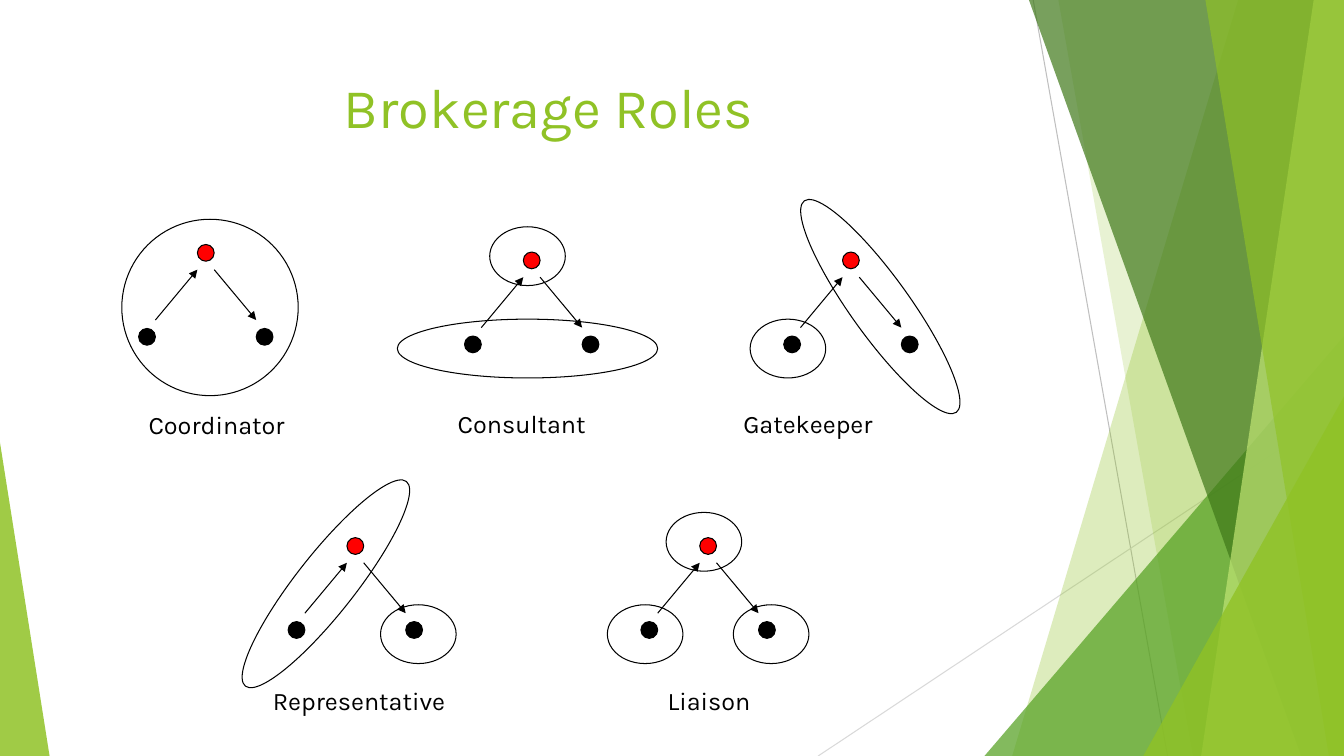
from dataclasses import dataclass

from lxml.etree import SubElement
from pptx import Presentation
from pptx.dml.color import RGBColor
from pptx.enum.shapes import MSO_CONNECTOR as Conn, MSO_SHAPE as Shape
from pptx.enum.text import MSO_ANCHOR as Anchor, PP_ALIGN as Align
from pptx.oxml.ns import qn
from pptx.util import Emu, Inches, Pt

COLS, ROWS = 160, 90  # square grid cells across and down the slide
CELL = Inches(1) / 12
DOT = 2
FONT = "Karla"
COLORS = {
    "black": "000000", "red": "FF0000", "lime": "90C226", "green": "54A021",
    "forest": "3F7819", "pale": "C0E474", "gray": "BFBFBF", "silver": "D9D9D9",
}


@dataclass(frozen=True)
class Facet:
    """Band from the top edge (x1 to x2) to the bottom edge (x3 to x4)."""
    x1: float
    x2: float
    x3: float
    x4: float
    color: str
    alpha: int


@dataclass(frozen=True)
class Wedge:
    """Right triangle standing on the bottom edge, its apex at one side."""
    x: float
    y: float
    w: float
    apex: int
    color: str
    alpha: int


@dataclass(frozen=True)
class Ring:
    x: float
    y: float
    w: float = 9
    h: float = 7
    angle: float = 0


@dataclass(frozen=True)
class Role:
    """A triad at its broker dot; rings and label are offsets from that dot."""
    name: str
    x: float
    y: float
    rings: tuple[Ring, ...]
    label_x: float
    label_y: float
    label_w: float = 20


DECOR = (
    Facet(147.4, COLS, COLS, 120.5, "lime", 30),
    Facet(126, COLS, COLS, 142, "lime", 20),
    Wedge(117.2, 40, 42.8, 1, "green", 72),
    Facet(122.5, COLS, COLS, 154.9, "forest", 70),
    Facet(156.4, COLS, COLS, 143, "pale", 70),
    Facet(143.5, COLS, COLS, 158.2, "lime", 65),
    Wedge(136.1, 47.2, 23.9, 1, "lime", 80),
    Wedge(0, 52.7, 5.9, 0, "lime", 85),
)
BROKER_RING, LEFT_RING, RIGHT_RING = Ring(-4, -3), Ring(-11, 8), Ring(4, 8)
ROLES = (
    Role("Coordinator", 23.5, 29.1, (Ring(-9, -3, 21, 21),), -7, 19),
    Role("Consultant", 62.3, 30, (BROKER_RING, Ring(-15, 8, 31)), -9, 18),
    Role("Gatekeeper", 100.3, 30, (LEFT_RING, Ring(-11, 3, 31, 7, 54.3)), -13, 18),
    Role("Representative", 41.3, 64, (RIGHT_RING, Ring(-18, 2, 31, 7, 308.2)), -10, 17, 23),
    Role("Liaison", 83.3, 64, (BROKER_RING, RIGHT_RING, LEFT_RING), -5, 17, 13),
)
DOTS = ((0, 0, "red"), (7, 10, "black"), (-7, 10, "black"))
ARROWS = ((-5, 9, 0, 3), (2, 3, 7, 9))


def cells(*values: float) -> list[Emu]:
    return [Emu(round(v * CELL)) for v in values]


def rgb(color: str) -> RGBColor:
    return RGBColor.from_string(COLORS[color])


def fill_clear(sp, color: str, alpha: int) -> None:
    """Fill without an outline, alpha being the opacity in percent."""
    sp.shadow.inherit = False
    sp.line.fill.background()
    sp.fill.solid()
    sp.fill.fore_color.rgb = rgb(color)
    clr = sp._element.spPr.find(".//" + qn("a:srgbClr"))
    SubElement(clr, qn("a:alpha"), val=str(alpha * 1000))


def draw_decor(shapes, d: Facet | Wedge) -> None:
    if isinstance(d, Facet):
        fb = shapes.build_freeform(*cells(d.x1, 0))
        fb.add_line_segments([cells(d.x2, 0), cells(d.x3, ROWS), cells(d.x4, ROWS)])
        sp = fb.convert_to_shape()
    else:
        sp = shapes.add_shape(Shape.ISOSCELES_TRIANGLE, *cells(d.x, d.y, d.w, ROWS - d.y))
        sp.adjustments[0] = d.apex
    fill_clear(sp, d.color, d.alpha)


def draw_line(shapes, ends: tuple, color: str, arrow: bool = False) -> None:
    line = shapes.add_connector(Conn.STRAIGHT, *cells(*ends))
    line.line.color.rgb = rgb(color)
    line.line.width = Pt(0.75)
    if arrow:
        SubElement(line.line._get_or_add_ln(), qn("a:tailEnd"), type="triangle")
    SubElement(line._element.spPr, qn("a:effectLst"))


def draw_ellipse(shapes, ring: Ring, color: str | None = None) -> None:
    sp = shapes.add_shape(Shape.OVAL, *cells(ring.x, ring.y, ring.w, ring.h))
    sp.rotation = ring.angle
    sp.shadow.inherit = False
    sp.line.color.rgb = rgb("black")
    sp.line.width = Pt(0.75)
    if color:
        sp.fill.solid()
        sp.fill.fore_color.rgb = rgb(color)
    else:
        sp.fill.background()


def draw_text(shapes, text: str, box: tuple, size: int, color: str,
              align: Align = Align.LEFT) -> None:
    tf = shapes.add_textbox(*cells(*box)).text_frame
    for key, value in {"word_wrap": True, "vertical_anchor": Anchor.TOP}.items():
        setattr(tf, key, value)
    p = tf.paragraphs[0]
    p.alignment = align
    r = p.add_run()
    r.text = text
    for key, value in {"name": FONT, "size": Pt(size)}.items():
        setattr(r.font, key, value)
    r.font.color.rgb = rgb(color)


def draw_role(s, role: Role) -> None:
    shapes = s.shapes.add_group_shape().shapes
    x, y = role.x, role.y
    for dx, dy, color in DOTS:
        draw_ellipse(shapes, Ring(x + dx, y + dy, DOT, DOT), color)
    for x1, y1, x2, y2 in ARROWS:
        draw_line(shapes, (x + x1, y + y1, x + x2, y + y2), "black", arrow=True)
    for ring in role.rings:
        draw_ellipse(shapes, Ring(x + ring.x, y + ring.y, ring.w, ring.h, ring.angle))
    box = (x + role.label_x, y + role.label_y, role.label_w, 4.8)
    draw_text(shapes, role.name, box, 18, "black")


def main() -> None:
    prs = Presentation()
    prs.slide_width, prs.slide_height = cells(COLS, ROWS)
    s = prs.slides.add_slide(prs.slide_layouts[6])
    draw_line(s.shapes, (123, 0, 139, ROWS), "gray")
    draw_line(s.shapes, (COLS, 48.4, 97.4, ROWS), "silver")
    for d in DECOR:
        draw_decor(s.shapes, d)
    draw_text(s.shapes, "Brokerage Roles", (8.9, 8, 112.8, 17.3), 40, "lime", Align.CENTER)
    for role in ROLES:
        draw_role(s, role)
    prs.save("out.pptx")


if __name__ == "__main__":
    main()
